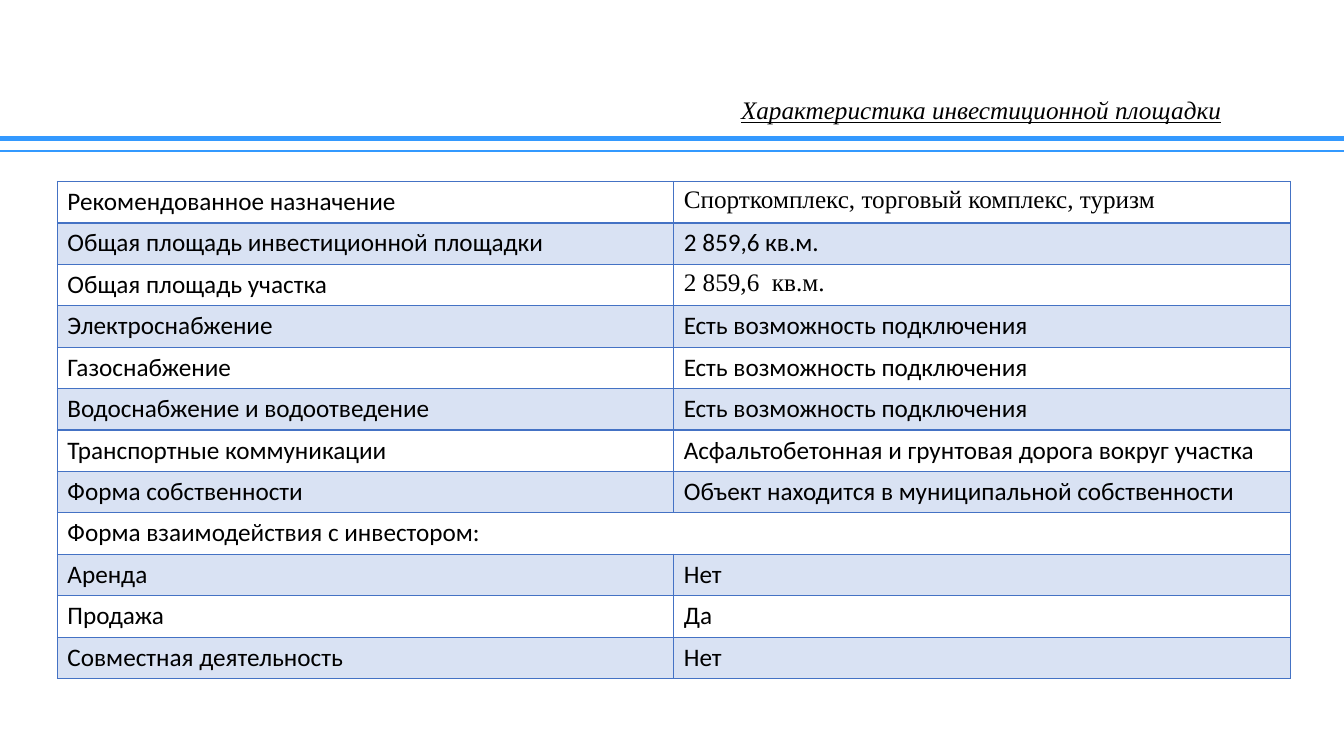
"""Build a slide with the characteristics table of an investment site."""
from dataclasses import dataclass

from lxml.etree import SubElement
from pptx import Presentation
from pptx.dml.color import RGBColor
from pptx.enum.shapes import MSO_CONNECTOR
from pptx.enum.text import MSO_ANCHOR, PP_ALIGN
from pptx.oxml import parse_xml
from pptx.oxml.ns import nsdecls, qn
from pptx.slide import Slide
from pptx.table import _Cell
from pptx.text.text import _Paragraph
from pptx.util import Pt

COLORS = {"rule": "3399FF", "table": "4472C4", "text": "000000"}
SANS = "Calibri"
SERIF = "Times New Roman"
SLIDE_WIDTH, SLIDE_HEIGHT = 960, 540
ROW_HEIGHT = 29.6
COLUMN_WIDTH = 440.3
BAND_ALPHA = 20


@dataclass
class Rule:
    top: float
    weight: float


@dataclass
class Row:
    label: str
    value: str | None
    value_font: str = SANS


RULES = [Rule(99.2, 3.5), Rule(108, 1.5)]

ROWS = [
    Row("Рекомендованное назначение", "Спорткомплекс, торговый комплекс, туризм", SERIF),
    Row("Общая площадь инвестиционной площадки", "2 859,6 кв.м."),
    Row("Общая площадь участка", "2 859,6  кв.м.", SERIF),
    Row("Электроснабжение", "Есть возможность подключения"),
    Row("Газоснабжение", "Есть возможность подключения"),
    Row("Водоснабжение и водоотведение", "Есть возможность подключения"),
    Row("Транспортные коммуникации", "Асфальтобетонная и грунтовая дорога вокруг участка"),
    Row("Форма собственности", "Объект находится в муниципальной собственности"),
    Row("Форма взаимодействия с инвестором:", None),
    Row("Аренда", "Нет"),
    Row("Продажа", "Да"),
    Row("Совместная деятельность", "Нет"),
]


def color(name: str) -> RGBColor:
    return RGBColor.from_string(COLORS[name])


def format_text(paragraph: _Paragraph, font_name: str) -> None:
    for run in paragraph.runs:
        run.font.name = font_name
        run.font.size = Pt(18)
        run.font.color.rgb = color("text")


def draw_rule(slide: Slide, rule: Rule) -> None:
    connector = slide.shapes.add_connector(
        MSO_CONNECTOR.STRAIGHT, Pt(0), Pt(rule.top), Pt(SLIDE_WIDTH), Pt(rule.top)
    )
    connector.line.color.rgb = color("rule")
    connector.line.width = Pt(rule.weight)
    SubElement(connector._element.spPr, qn("a:effectLst"))


def draw_title(slide: Slide, text: str) -> None:
    shape = slide.shapes.add_textbox(Pt(480.2), Pt(69.8), Pt(441.4), Pt(19.4))
    text_frame = shape.text_frame
    text_frame.word_wrap = True
    text_frame.vertical_anchor = MSO_ANCHOR.MIDDLE
    text_frame.text = text
    paragraph = text_frame.paragraphs[0]
    paragraph.alignment = PP_ALIGN.CENTER
    paragraph.line_spacing = 0.9
    format_text(paragraph, SERIF)
    for run in paragraph.runs:
        run.font.italic = True
        run.font.underline = True


def style_cell(cell: _Cell, banded: bool, bottom_weight: float) -> None:
    properties = cell._tc.get_or_add_tcPr()
    if banded:
        cell.fill.solid()
        cell.fill.fore_color.rgb = color("table")
        fill_color = properties.find(".//" + qn("a:srgbClr"))
        SubElement(fill_color, qn("a:alpha"), val=str(BAND_ALPHA * 1000))
    else:
        cell.fill.background()
    weights = {"lnL": 1, "lnR": 1, "lnT": 1, "lnB": bottom_weight}
    for position, (side, weight) in enumerate(weights.items()):
        border = parse_xml(
            f'<a:{side} {nsdecls("a")} w="{Pt(weight)}"><a:solidFill>'
            f'<a:srgbClr val="{COLORS["table"]}"/></a:solidFill></a:{side}>'
        )
        properties.insert(position, border)


def write_cell(cell: _Cell, text: str, font_name: str) -> None:
    cell.text_frame.text = text
    format_text(cell.text_frame.paragraphs[0], font_name)


def draw_table(slide: Slide, rows: list[Row]) -> None:
    table = slide.shapes.add_table(
        len(rows), 2, Pt(41), Pt(129.6), Pt(2 * COLUMN_WIDTH), Pt(len(rows) * ROW_HEIGHT)
    ).table
    table.first_row = False
    table.horz_banding = False
    for column in table.columns:
        column.width = Pt(COLUMN_WIDTH)
    for index, row in enumerate(rows):
        table.rows[index].height = Pt(ROW_HEIGHT)
        label_cell, value_cell = table.cell(index, 0), table.cell(index, 1)
        for cell in (label_cell, value_cell):
            style_cell(cell, banded=index % 2 == 1, bottom_weight=2 if index == 0 else 1)
        write_cell(label_cell, row.label, SANS)
        if row.value is None:
            label_cell.merge(value_cell)
        else:
            write_cell(value_cell, row.value, row.value_font)


def main() -> None:
    presentation = Presentation()
    presentation.slide_width = Pt(SLIDE_WIDTH)
    presentation.slide_height = Pt(SLIDE_HEIGHT)
    slide = presentation.slides.add_slide(presentation.slide_layouts[6])
    for rule in RULES:
        draw_rule(slide, rule)
    draw_title(slide, "Характеристика инвестиционной площадки")
    draw_table(slide, ROWS)
    presentation.save("out.pptx")


if __name__ == "__main__":
    main()
